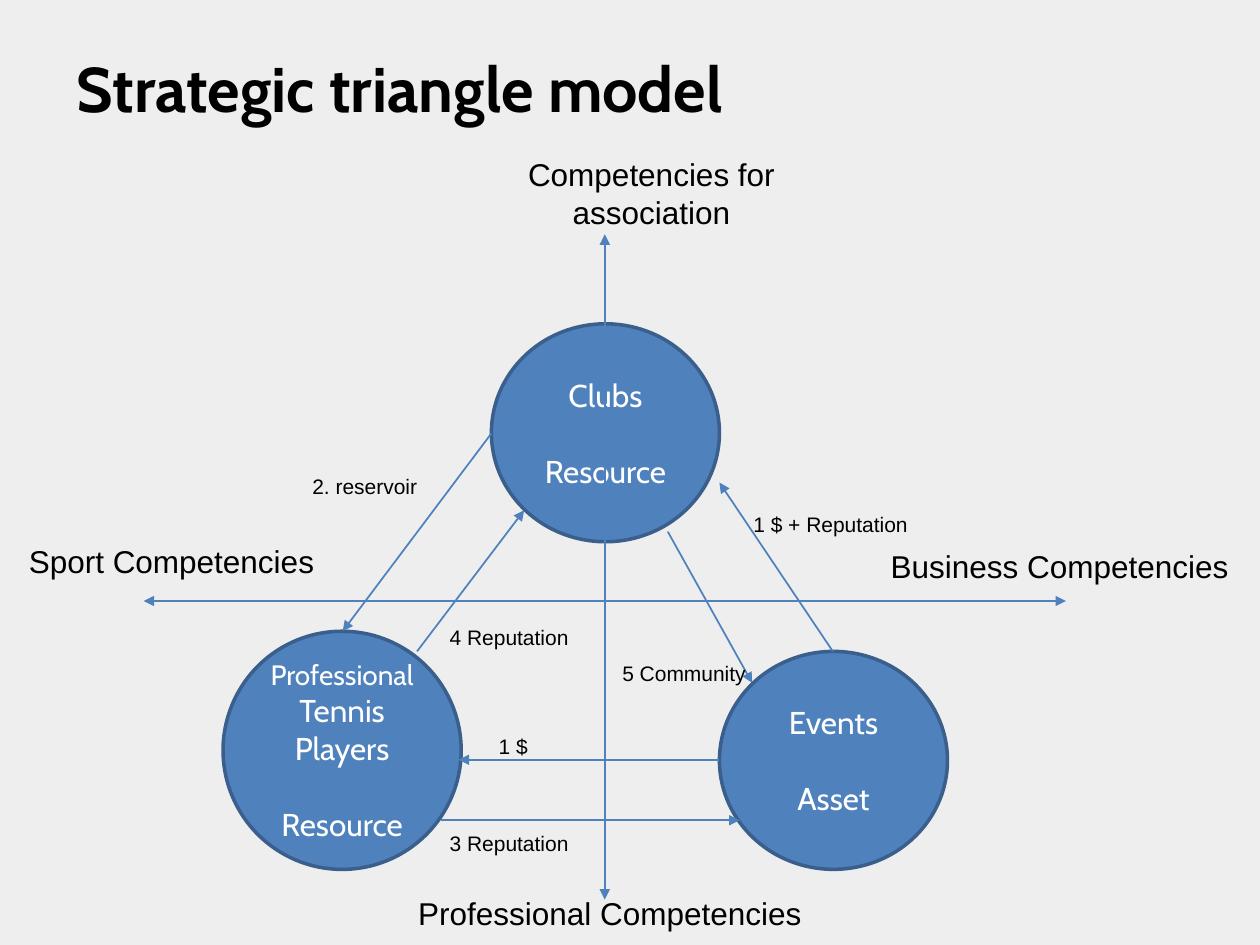
from lxml import etree
from pptx import Presentation
from pptx import util as u
from pptx.dml.color import RGBColor
from pptx.enum import shapes, text
from pptx.oxml.ns import qn

COLS, ROWS = 100, 75
BLUE, EDGE, BLACK, WHITE = "4F81BD", "3A5F8C", "000000", "FFFFFF"


def rgb(value):
    return RGBColor.from_string(value)


class Deck:
    """Holds the style and the current slide; lengths are grid columns and rows."""

    def __init__(self, background):
        self.prs = Presentation()
        self.prs.slide_width, self.prs.slide_height = u.Inches(10), u.Inches(7.5)
        self.s = self.prs.slides.add_slide(self.prs.slide_layouts[6])
        fill = self.s.background.fill
        fill.solid()
        fill.fore_color.rgb = rgb(background)

    def x(self, cols):
        return round(self.prs.slide_width * cols / COLS)

    def y(self, rows):
        return round(self.prs.slide_height * rows / ROWS)

    def box(self, left, top, width, height):
        return self.x(left), self.y(top), self.x(width), self.y(height)

    def run(self, p, words, size, font, color, bold=False):
        r = p.add_run()
        r.text = words
        r.font.size, r.font.name, r.font.bold = u.Pt(size), font, bold
        r.font.color.rgb = rgb(color)

    def label(self, words, place, size=12, font="Arial", bold=False,
              align=text.PP_ALIGN.LEFT, anchor=text.MSO_ANCHOR.TOP):
        tf = self.s.shapes.add_textbox(*self.box(*place)).text_frame
        tf.word_wrap, tf.vertical_anchor = True, anchor
        tf.paragraphs[0].alignment = align
        self.run(tf.paragraphs[0], words, size, font, BLACK, bold)

    def circle(self, place, lines, role):
        """lines: (words, size) pairs; the role stands one line apart below."""
        sp = self.s.shapes.add_shape(shapes.MSO_SHAPE.OVAL, *self.box(*place))
        sp.shadow.inherit = False
        sp.fill.solid()
        sp.fill.fore_color.rgb = rgb(BLUE)
        sp.line.color.rgb, sp.line.width = rgb(EDGE), u.Pt(2)
        tf = sp.text_frame
        tf.word_wrap, tf.vertical_anchor = True, text.MSO_ANCHOR.MIDDLE
        tf.margin_left = tf.margin_right = u.Inches(0.05)
        for i, (words, size) in enumerate(lines + [(role, 18)]):
            p = tf.add_paragraph() if i else tf.paragraphs[0]
            p.alignment = text.PP_ALIGN.CENTER
            if i == len(lines):
                p.space_before = u.Pt(21.8)
            self.run(p, words, size, "Cabin", WHITE)

    def arrow(self, x1, y1, x2, y2, both=False):
        c = self.s.shapes.add_connector(
            shapes.MSO_CONNECTOR.STRAIGHT, self.x(x1), self.y(y1), self.x(x2), self.y(y2))
        c.line.color.rgb, c.line.width = rgb(BLUE), u.Pt(1)
        ln = c.line._get_or_add_ln()
        for end in ("a:headEnd", "a:tailEnd") if both else ("a:tailEnd",):
            etree.SubElement(ln, qn(end), type="triangle")
        etree.SubElement(c._element.spPr, qn("a:effectLst"))


def main():
    d = Deck("EEEEEE")
    d.label("Strategic triangle model", (5.1, -2.1, 90, 12.5), 36, "Cabin", True,
            anchor=text.MSO_ANCHOR.BOTTOM)

    # Corners of the triangle
    d.circle((39, 25.7, 18.1, 17.3), [("Clubs", 18)], "Resource")
    d.circle((17.7, 50.1, 18.9, 18.9),
             [("Professional", 16), ("Tennis", 18), ("Players", 18)], "Resource")
    d.circle((57.1, 51.7, 18.1, 17.3), [("Events", 18)], "Asset")

    # Competency axes and their names
    d.arrow(48, 18.6, 48, 71.4, both=True)
    d.arrow(11.4, 47.7, 84.6, 47.7, both=True)
    d.label("Competencies for association", (39.1, 11.8, 25.2, 7.1), 18,
            align=text.PP_ALIGN.CENTER)
    for words, left, top, width in (
            ("Sport Competencies", 1.3, 42.5, 25.2),
            ("Business Competencies", 69.7, 42.9, 30.9),
            ("Professional Competencies", 32.2, 70.5, 35.8)):
        d.label(words, (left, top, width, 4), 18)

    # Exchanges between the corners
    for ends in ((66.1, 51.7, 57.1, 38.3), (39, 34.4, 27.2, 50.1),
                 (57.1, 60.3, 36.4, 60.3), (35, 65.1, 58.7, 65.1),
                 (33.1, 51.7, 41.6, 40.5), (53, 42.2, 59.7, 54.2)):
        d.arrow(*ends)
    for words, left, top in (
            ("1 $ + Reputation", 58.8, 40.1), ("2. reservoir", 23.8, 37.1),
            ("1 $", 38.6, 57.7), ("3 Reputation", 34.7, 65.4),
            ("4 Reputation", 34.7, 49.1), ("5 Community", 48.4, 51.9)):
        d.label(words, (left, top, 15.5, 3))

    d.prs.save("out.pptx")


if __name__ == "__main__":
    main()
